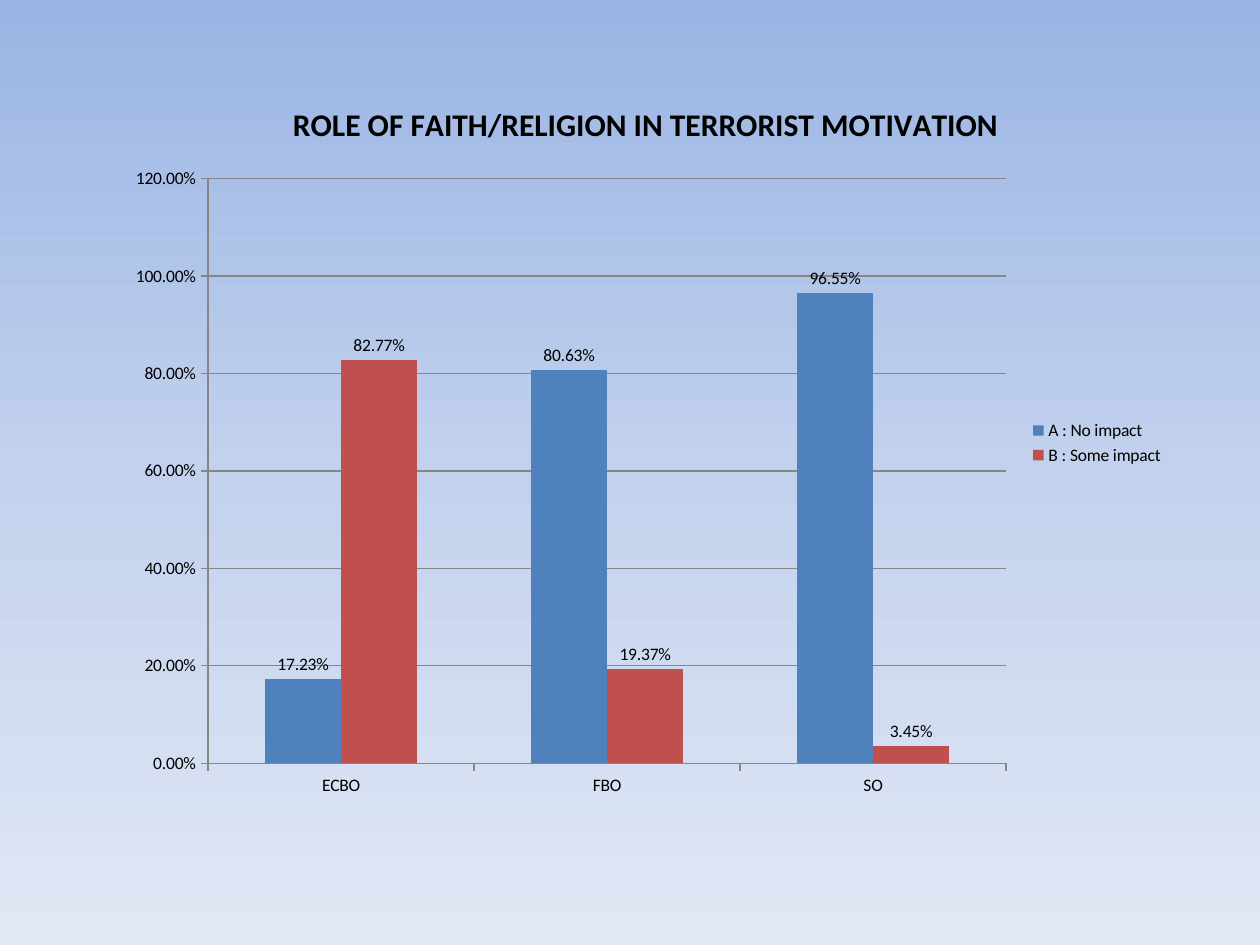
from copy import deepcopy
from dataclasses import dataclass

from pptx import Presentation
from pptx.chart.data import CategoryChartData
from pptx.dml.color import RGBColor
from pptx.enum.chart import XL_CHART_TYPE as ChartType
from pptx.enum.chart import XL_LABEL_POSITION as LabelPosition
from pptx.enum.chart import XL_LEGEND_POSITION as LegendPosition
from pptx.enum.chart import XL_TICK_MARK as TickMark
from pptx.oxml.ns import qn
from pptx.util import Inches, Pt


@dataclass(frozen=True)
class Theme:
    font: str = "Calibri"
    text: str = "000000"
    axis: str = "868686"
    bars: tuple = ("4F81BD", "C0504D")
    backdrop: tuple = ((0, "9AB5E4"), (0.5, "C2D1ED"), (1, "E1E8F5"))
    body_size: int = 10
    title_size: int = 18
    line_width: float = 0.75
    percent: str = "0.00%"


THEME = Theme()
TITLE = "ROLE OF FAITH/RELIGION IN TERRORIST MOTIVATION"
GROUPS = ("ECBO", "FBO", "SO")
IMPACT = {
    "A : No impact": (0.1723, 0.8063, 0.9655),
    "B : Some impact": (0.8277, 0.1937, 0.0345),
}


def apply(target, settings):
    for name, value in settings.items():
        setattr(target, name, value)


def style_font(font, size, bold=False):
    apply(font, {"name": THEME.font, "size": Pt(size), "bold": bold})
    font.color.rgb = RGBColor.from_string(THEME.text)


def style_line(line):
    line.color.rgb = RGBColor.from_string(THEME.axis)
    line.width = Pt(THEME.line_width)


def paint_background(slide):
    fill = slide.background.fill
    fill.gradient()
    fill.gradient_angle = 270
    stop_list = next(slide.element.iter(qn("a:gsLst")))
    stop_list.insert(1, deepcopy(stop_list[0]))
    for stop, (position, color) in zip(fill.gradient_stops, THEME.backdrop):
        stop.position = position
        stop.color.rgb = RGBColor.from_string(color)


def add_impact_chart(slide):
    impact_data = CategoryChartData(number_format=THEME.percent)
    impact_data.categories = GROUPS
    for name, shares in IMPACT.items():
        impact_data.add_series(name, shares)
    chart = slide.shapes.add_chart(
        ChartType.COLUMN_CLUSTERED,
        Inches(0.91), Inches(0.6), Inches(8.43), Inches(5.83),
        impact_data,
    ).chart
    style_font(chart.font, THEME.body_size)
    return chart


def style_title(chart):
    chart.has_title = True
    chart.chart_title.include_in_layout = False
    heading = chart.chart_title.text_frame
    heading.text = TITLE
    style_font(heading.paragraphs[0].runs[0].font, THEME.title_size, bold=True)


def style_legend(chart):
    chart.has_legend = True
    apply(chart.legend, {
        "position": LegendPosition.RIGHT,
        "include_in_layout": False,
    })


def style_axes(chart):
    for axis in (chart.category_axis, chart.value_axis):
        apply(axis, {
            "major_tick_mark": TickMark.OUTSIDE,
            "minor_tick_mark": TickMark.NONE,
        })
        style_line(axis.format.line)
    shares = chart.value_axis
    apply(shares, {
        "minimum_scale": 0,
        "maximum_scale": 1.2,
        "major_unit": 0.2,
        "has_major_gridlines": True,
    })
    style_line(shares.major_gridlines.format.line)
    apply(shares.tick_labels, {
        "number_format": THEME.percent,
        "number_format_is_linked": False,
    })


def style_bars(chart):
    plot = chart.plots[0]
    apply(plot, {"gap_width": 150, "overlap": 0, "vary_by_categories": False})
    for series, color in zip(plot.series, THEME.bars):
        series.format.fill.solid()
        series.format.fill.fore_color.rgb = RGBColor.from_string(color)
        apply(series.data_labels, {
            "show_value": True,
            "number_format": THEME.percent,
            "number_format_is_linked": False,
            "position": LabelPosition.OUTSIDE_END,
        })


def main():
    deck = Presentation()
    apply(deck, {"slide_width": Inches(10), "slide_height": Inches(7.5)})
    slide = deck.slides.add_slide(deck.slide_layouts.get_by_name("Blank"))
    paint_background(slide)
    chart = add_impact_chart(slide)
    for style in (style_title, style_legend, style_axes, style_bars):
        style(chart)
    deck.save("out.pptx")


if __name__ == "__main__":
    main()
